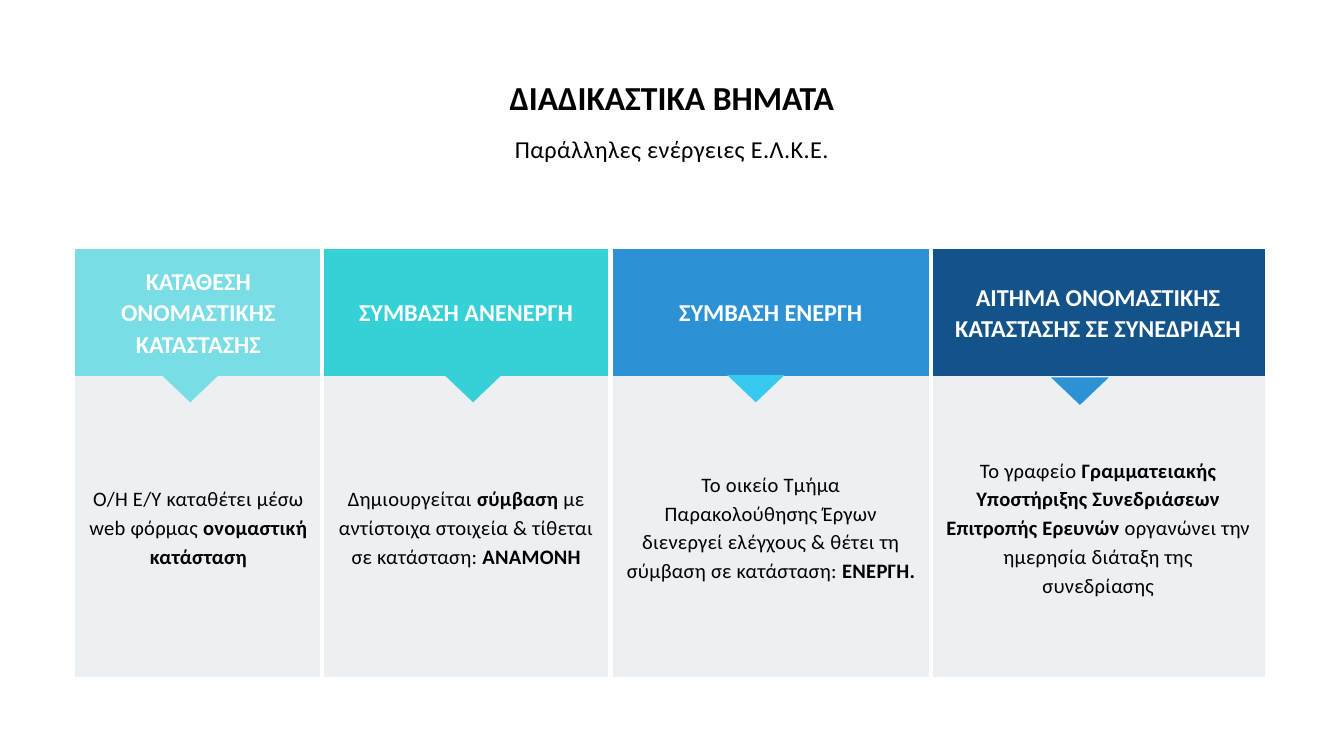
from lxml import etree
from pptx import Presentation
from pptx.dml.color import RGBColor
from pptx.enum.shapes import MSO_SHAPE
from pptx.enum.text import MSO_ANCHOR, MSO_AUTO_SIZE, PP_ALIGN
from pptx.oxml.ns import qn
from pptx.util import Cm, Pt

TRIANGLE = MSO_SHAPE.FLOWCHART_MERGE
CENTER = PP_ALIGN.CENTER
MIDDLE, TOP = MSO_ANCHOR.MIDDLE, MSO_ANCHOR.TOP
NO_AUTOFIT = MSO_AUTO_SIZE.NONE

FONT = "Calibri"
BLACK, WHITE, PALE = "000000", "FFFFFF", "EDF0F2"

TITLE = "ΔΙΑΔΙΚΑΣΤΙΚΑ ΒΗΜΑΤΑ"
SUBTITLE = "Παράλληλες ενέργειες Ε.Λ.Κ.Ε."

STEPS = [
    {"heading": "ΚΑΤΑΘΕΣΗ ΟΝΟΜΑΣΤΙΚΗΣ ΚΑΤΑΣΤΑΣΗΣ",
     "body": [("Ο/Η Ε/Υ καταθέτει μέσω web φόρμας ", False),
              ("ονομαστική κατάσταση", True)],
     "width": 9.32, "color": "78DDE4",
     "pointer": (6.1, 14.17, "78DDE4")},
    {"heading": "ΣΥΜΒΑΣΗ ΑΝΕΝΕΡΓΗ",
     "body": [("Δημιουργείται ", False), ("σύμβαση", True),
              (" με αντίστοιχα στοιχεία & τίθεται σε κατάσταση: ", False),
              ("ΑΝΑΜΟΝΗ", True)],
     "width": 10.92, "color": "36D1D6",
     "pointer": (16.79, 14.17, "36D1D6")},
    {"heading": "ΣΥΜΒΑΣΗ ΕΝΕΡΓΗ",
     "body": [("Το οικείο Τμήμα Παρακολούθησης Έργων διενεργεί ελέγχους "
               "& θέτει τη σύμβαση σε κατάσταση: ", False),
              ("ΕΝΕΡΓΗ.", True)],
     "width": 12.12, "color": "2C92D5",
     "pointer": (27.48, 14.17, "37C9EF")},
    {"heading": "ΑΙΤΗΜΑ ΟΝΟΜΑΣΤΙΚΗΣ ΚΑΤΑΣΤΑΣΗΣ ΣΕ ΣΥΝΕΔΡΙΑΣΗ",
     "body": [("Το γραφείο ", False),
              ("Γραμματειακής Υποστήριξης Συνεδριάσεων Επιτροπής Ερευνών ", True),
              ("οργανώνει την ημερησία διάταξη της συνεδρίασης", False)],
     "width": 12.62, "color": "13538A",
     "pointer": (39.73, 14.27, "2C92D5")},
]

TABLE_LEFT, TABLE_TOP = 2.84, 9.42
HEADING_HEIGHT, BODY_HEIGHT = 4.8, 11.38
CELL_MARGIN = 0.53
BORDER_WIDTH = 5.25
POINTER_WIDTH, POINTER_HEIGHT = 2.18, 1.04


def paint(fill, color):
    fill.solid()
    fill.fore_color.rgb = RGBColor.from_string(color)


def write(frame, pieces, size, color, leading, tracking=0):
    paragraph = frame.paragraphs[0]
    paragraph.alignment = CENTER
    paragraph.line_spacing = Pt(leading)
    for text, bold in pieces:
        run = paragraph.add_run()
        run.text = text
        run.font.name = FONT
        run.font.size = Pt(size)
        run.font.bold = bold
        run.font.color.rgb = RGBColor.from_string(color)
        if tracking:
            run.font._element.set("spc", str(round(tracking * 100)))


def set_margins(holder, margin):
    holder.margin_left = holder.margin_right = Cm(margin)
    holder.margin_top = holder.margin_bottom = Cm(margin)


def place_heading(box, top, height, text, bold, size, leading, tracking=0):
    box.left, box.top, box.width, box.height = Cm(8.89), Cm(top), Cm(33.02), Cm(height)
    frame = box.text_frame
    frame.word_wrap = True
    frame.auto_size = NO_AUTOFIT
    frame.vertical_anchor = TOP
    set_margins(frame, 0)
    write(frame, [(text, bold)], size, BLACK, leading, tracking)


def set_borders(cell, is_first, is_last):
    properties = cell._tc.get_or_add_tcPr()
    sides = [("a:lnL", not is_first), ("a:lnR", not is_last),
             ("a:lnT", False), ("a:lnB", False)]
    for position, (side, visible) in enumerate(sides):
        line = etree.Element(qn(side), w=str(Pt(BORDER_WIDTH) if visible else 0))
        if visible:
            fill = etree.SubElement(line, qn("a:solidFill"))
            etree.SubElement(fill, qn("a:srgbClr"), val=WHITE)
        else:
            etree.SubElement(line, qn("a:noFill"))
        properties.insert(position, line)


def fill_cell(cell, color, column):
    paint(cell.fill, color)
    cell.vertical_anchor = MIDDLE
    set_margins(cell, CELL_MARGIN)
    set_borders(cell, column == 0, column == len(STEPS) - 1)


def add_steps(slide):
    table = slide.shapes.add_table(
        2, len(STEPS), Cm(TABLE_LEFT), Cm(TABLE_TOP),
        Cm(sum(step["width"] for step in STEPS)),
        Cm(HEADING_HEIGHT + BODY_HEIGHT)).table
    table.rows[0].height = Cm(HEADING_HEIGHT)
    table.rows[1].height = Cm(BODY_HEIGHT)
    for column, step in enumerate(STEPS):
        table.columns[column].width = Cm(step["width"])
        heading, body = table.cell(0, column), table.cell(1, column)
        fill_cell(heading, step["color"], column)
        fill_cell(body, PALE, column)
        write(heading.text_frame, [(step["heading"], True)], 26, WHITE, 33.8)
        write(body.text_frame, step["body"], 22, BLACK, 30.8, 0.3)


def add_pointers(slide):
    for step in STEPS:
        left, top, color = step["pointer"]
        pointer = slide.shapes.add_shape(
            TRIANGLE, Cm(left), Cm(top), Cm(POINTER_WIDTH), Cm(POINTER_HEIGHT))
        pointer.shadow.inherit = False
        paint(pointer.fill, color)
        pointer.line.fill.background()


def main():
    deck = Presentation()
    deck.slide_width, deck.slide_height = Cm(50.8), Cm(28.58)
    slide = deck.slides.add_slide(deck.slide_layouts[5])
    add_steps(slide)
    add_pointers(slide)
    place_heading(slide.shapes.title, 2.77, 1.6, TITLE, True, 36, 46.8)
    subtitle = slide.shapes.add_textbox(0, 0, 0, 0)
    place_heading(subtitle, 4.88, 1.19, SUBTITLE, False, 26, 36.4, 0.4)
    deck.save("out.pptx")


if __name__ == "__main__":
    main()
